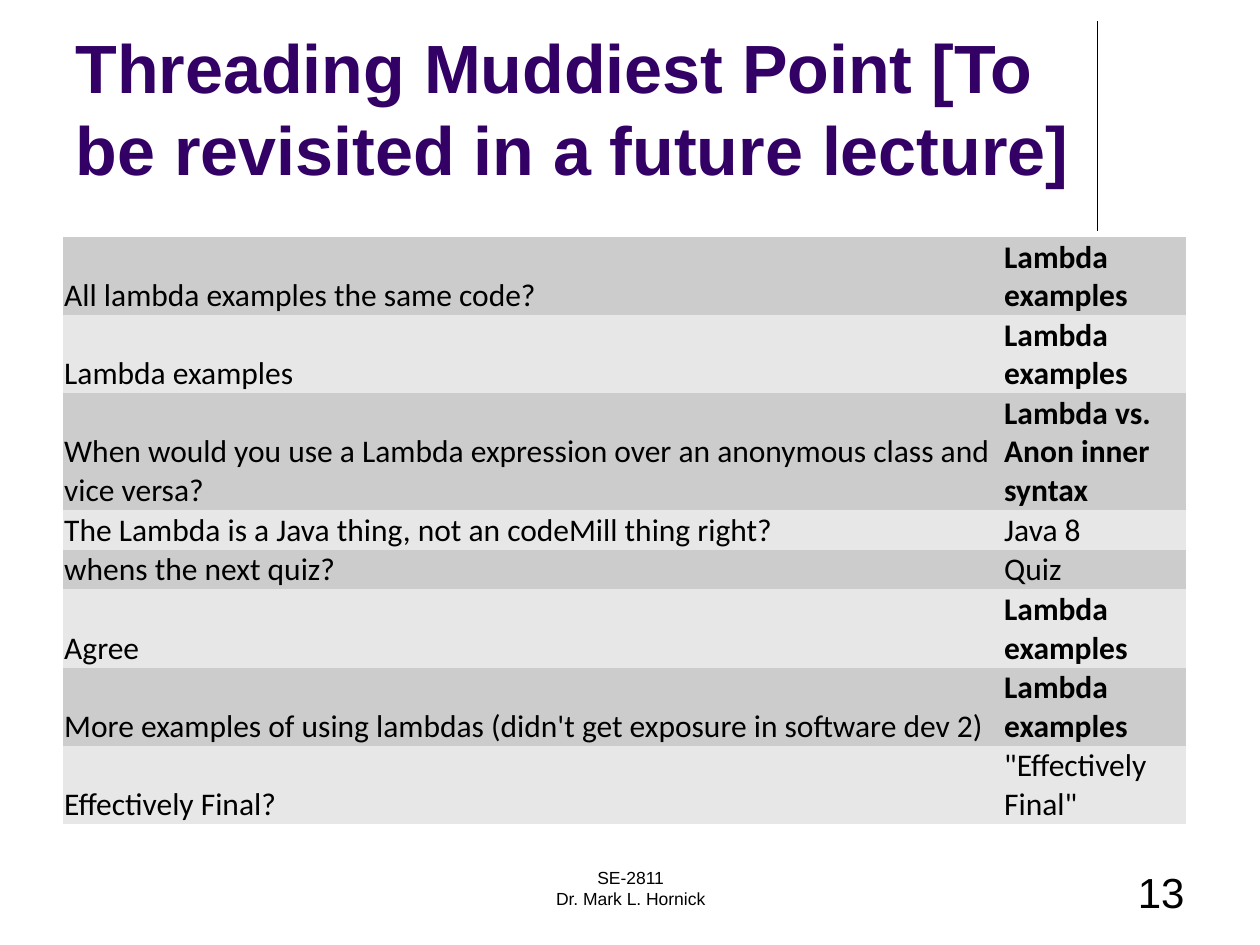
from pptx import Presentation
from pptx.dml.color import RGBColor
from pptx.enum.shapes import MSO_CONNECTOR
from pptx.enum.text import MSO_ANCHOR, PP_ALIGN
from pptx.oxml.ns import qn
from pptx.util import Inches, Pt
from lxml import etree

STRAIGHT = MSO_CONNECTOR.STRAIGHT
TOP, BOTTOM = MSO_ANCHOR.TOP, MSO_ANCHOR.BOTTOM
LEFT, CENTER, RIGHT = PP_ALIGN.LEFT, PP_ALIGN.CENTER, PP_ALIGN.RIGHT
TITLE_ONLY = 5
PLAIN_TABLE_STYLE = "{2D5ABB26-0587-4C30-8999-92F81FD0307C}"

EXAMPLES = "Lambda examples"
QUESTIONS = [
    ("All lambda examples the same code?", EXAMPLES, True),
    ("Lambda examples", EXAMPLES, True),
    ("When would you use a Lambda expression over an anonymous class and vice versa?",
     "Lambda vs. Anon inner syntax", True),
    ("The Lambda is a Java thing, not an codeMill thing right?", "Java 8", False),
    ("whens the next quiz?", "Quiz", False),
    ("Agree", EXAMPLES, True),
    ("More examples of using lambdas (didn't get exposure in software dev 2)", EXAMPLES, True),
    ("Effectively Final?", '"Effectively Final"', False),
]


def color(value):
    return RGBColor.from_string(value)


def write(frame, text, font="Arial", size=18, fill="000000", bold=False,
          align=LEFT):
    frame.word_wrap = True
    for index, line in enumerate(text.split("\n")):
        para = frame.paragraphs[0] if index == 0 else frame.add_paragraph()
        para.alignment = align
        span = para.add_run()
        span.text = line
        span.font.name = font
        span.font.size = Pt(size)
        span.font.bold = bold
        span.font.color.rgb = color(fill)


class LecturePage:
    ink = "000000"
    title_fill = "330066"
    bands = ("CCCCCC", "E7E7E7")

    def __init__(self, deck):
        self.page = deck.slides.add_slide(deck.slide_layouts[TITLE_ONLY])

    def title(self, text, left, top, width, height):
        box = self.page.shapes.title
        box.left, box.top = Inches(left), Inches(top)
        box.width, box.height = Inches(width), Inches(height)
        box.text_frame.vertical_anchor = BOTTOM
        write(box.text_frame, text, size=39, fill=self.title_fill, bold=True)

    def rule(self, x, top, bottom):
        line = self.page.shapes.add_connector(
            STRAIGHT, Inches(x), Inches(top), Inches(x), Inches(bottom))
        line.line.color.rgb = color(self.ink)
        line.line.width = Pt(0.75)
        etree.SubElement(line._element.spPr, qn("a:effectLst"))

    def label(self, text, left, top, width, height, **style):
        box = self.page.shapes.add_textbox(
            Inches(left), Inches(top), Inches(width), Inches(height))
        box.text_frame.vertical_anchor = TOP
        write(box.text_frame, text, **style)

    def question_table(self, questions, left, top, widths, row_height):
        table = self.page.shapes.add_table(
            len(questions), len(widths), Inches(left), Inches(top),
            Inches(sum(widths)), Inches(row_height * len(questions))).table
        table.first_row = table.horz_banding = False
        table._tbl.tblPr.find(qn("a:tableStyleId")).text = PLAIN_TABLE_STYLE
        for column, width in zip(table.columns, widths):
            column.width = Inches(width)
        for row, (question, topic, bold) in enumerate(questions):
            band = self.bands[row % 2]
            self.cell(table.cell(row, 0), question, band, False)
            self.cell(table.cell(row, 1), topic, band, bold)

    def cell(self, cell, text, band, bold):
        cell.fill.solid()
        cell.fill.fore_color.rgb = color(band)
        cell.vertical_anchor = BOTTOM
        cell.margin_left = cell.margin_right = cell.margin_top = Inches(0.01)
        cell.margin_bottom = 0
        write(cell.text_frame, text, font="Calibri", fill=self.ink, bold=bold)


def main():
    deck = Presentation()
    deck.slide_width, deck.slide_height = Inches(10), Inches(7.5)
    lecture = LecturePage(deck)
    lecture.rule(8.71, 0.17, 1.83)
    lecture.title("Threading Muddiest Point [To be revisited in a future lecture]",
                  0.5, 0.13, 8.25, 1.42)
    lecture.question_table(QUESTIONS, 0.5, 1.88, (7.46, 1.45), 0.2)
    lecture.label("SE-2811\nDr. Mark L. Hornick", 3.42, 6.83, 3.17, 0.5,
                  size=10, align=CENTER)
    lecture.label("13", 7.17, 6.83, 2.33, 0.5, size=24, align=RIGHT)
    deck.save("out.pptx")


if __name__ == "__main__":
    main()
